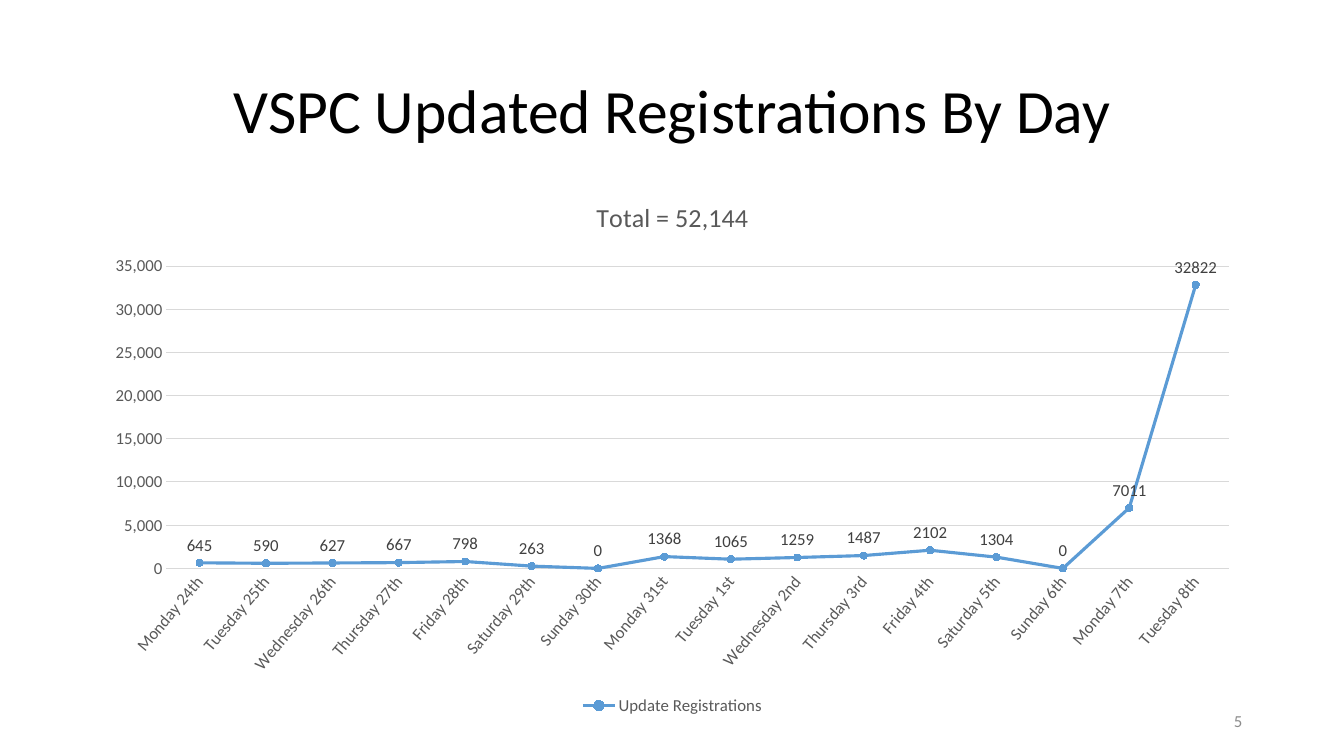
from dataclasses import dataclass
from typing import Any

from lxml.etree import SubElement
from pptx import Presentation
from pptx.chart.data import CategoryChartData
from pptx.dml.color import RGBColor
from pptx.enum.chart import (
    XL_CHART_TYPE as ChartType,
    XL_LABEL_POSITION as LabelPos,
    XL_LEGEND_POSITION as LegendPos,
    XL_MARKER_STYLE as Marker,
    XL_TICK_MARK as Tick,
)
from pptx.enum.text import MSO_ANCHOR as Anchor, PP_ALIGN as Align
from pptx.oxml.ns import qn
from pptx.util import Inches, Pt

BLACK = RGBColor(0x00, 0x00, 0x00)
DARK = RGBColor(0x40, 0x40, 0x40)
GREY = RGBColor(0x59, 0x59, 0x59)
MUTED = RGBColor(0x8C, 0x8C, 0x8C)
RULE = RGBColor(0xD9, 0xD9, 0xD9)
BLUE = RGBColor(0x5B, 0x9B, 0xD5)

WIDTH, HEIGHT = Inches(40 / 3), Inches(7.5)
FONT = "Calibri"
DAY_ANGLE = -50

REGISTRATIONS = {
    "Monday 24th": 645,
    "Tuesday 25th": 590,
    "Wednesday 26th": 627,
    "Thursday 27th": 667,
    "Friday 28th": 798,
    "Saturday 29th": 263,
    "Sunday 30th": 0,
    "Monday 31st": 1368,
    "Tuesday 1st": 1065,
    "Wednesday 2nd": 1259,
    "Thursday 3rd": 1487,
    "Friday 4th": 2102,
    "Saturday 5th": 1304,
    "Sunday 6th": 0,
    "Monday 7th": 7011,
    "Tuesday 8th": 32822,
}


@dataclass(frozen=True)
class Area:
    left: float
    top: float
    width: float
    height: float

    def box(self) -> dict[str, int]:
        return {
            "left": round(self.left * WIDTH),
            "top": round(self.top * HEIGHT),
            "width": round(self.width * WIDTH),
            "height": round(self.height * HEIGHT),
        }


@dataclass(frozen=True)
class TextStyle:
    size: float
    color: RGBColor
    align: Align = Align.CENTER
    spacing: float = 1.0


TITLE_AREA = Area(0.92 / 13.33, 0.4 / 7.5, 11.5 / 13.33, 1.45 / 7.5)
CHART_AREA = Area(0.92 / 13.33, 1.85 / 7.5, 11.5 / 13.33, 5.29 / 7.5)
NUMBER_AREA = Area(9.42 / 13.33, 6.95 / 7.5, 3 / 13.33, 0.4 / 7.5)

TOTAL_LAYOUT = {"x": 4.95 / 11.5, "y": 0.08 / 5.29}
PLOT_LAYOUT = {"x": 0.73 / 11.5, "y": 0.79 / 5.29, "w": 10.54 / 11.5, "h": 3 / 5.29}

TITLE_STYLE = TextStyle(44, BLACK, spacing=0.9)
NUMBER_STYLE = TextStyle(12, MUTED, Align.RIGHT)
TOTAL_STYLE = TextStyle(18.6, GREY)
AXIS_STYLE = TextStyle(12, GREY)
LABEL_STYLE = TextStyle(12, DARK)


def set_all(target: Any, values: dict[str, Any]) -> None:
    for name, value in values.items():
        setattr(target, name, value)


def set_font(font: Any, style: TextStyle) -> None:
    set_all(font, {"name": FONT, "size": Pt(style.size), "bold": False})
    font.color.rgb = style.color


def set_line(line: Any, color: RGBColor, width: float) -> None:
    line.color.rgb = color
    line.width = Pt(width)


def write(tf: Any, text: str, style: TextStyle) -> None:
    set_all(tf, {"word_wrap": True, "vertical_anchor": Anchor.MIDDLE})
    p = tf.paragraphs[0]
    set_all(p, {"alignment": style.align, "line_spacing": style.spacing})
    r = p.add_run()
    r.text = text
    set_font(r.font, style)


def place(parent: Any, index: int, shares: dict[str, float], inner: bool) -> None:
    for old in parent.findall(qn("c:layout")):
        parent.remove(old)
    layout = SubElement(parent, qn("c:layout"))
    parent.insert(index, layout)
    manual = SubElement(layout, qn("c:manualLayout"))
    values = {"layoutTarget": "inner"} if inner else {}
    values |= {"xMode": "edge", "yMode": "edge"}
    values |= {name: f"{share:.4f}" for name, share in shares.items()}
    for name, value in values.items():
        SubElement(manual, qn(f"c:{name}")).set("val", value)


def format_axes(chart: Any) -> None:
    for axis in (chart.category_axis, chart.value_axis):
        set_all(axis, {"major_tick_mark": Tick.NONE, "minor_tick_mark": Tick.NONE})
        set_font(axis.tick_labels.font, AXIS_STYLE)
    set_line(chart.category_axis.format.line, RULE, 0.75)
    axis = chart.value_axis
    axis.format.line.fill.background()
    set_line(axis.major_gridlines.format.line, RULE, 0.75)
    set_all(axis, {"minimum_scale": 0, "maximum_scale": 35000, "major_unit": 5000})
    set_all(axis.tick_labels, {"number_format": "#,##0", "number_format_is_linked": False})
    for body in chart.element.xpath(".//c:catAx/c:txPr/a:bodyPr"):
        body.set("rot", str(DAY_ANGLE * 60000))
        body.set("vert", "horz")


def format_series(series: Any) -> None:
    series.smooth = False
    set_line(series.format.line, BLUE, 2.25)
    marker = series.marker
    set_all(marker, {"style": Marker.CIRCLE, "size": 5})
    marker.format.fill.solid()
    marker.format.fill.fore_color.rgb = BLUE
    set_line(marker.format.line, BLUE, 0.75)
    labels = series.data_labels
    set_all(labels, {"show_value": True, "position": LabelPos.ABOVE})
    set_font(labels.font, LABEL_STYLE)


def add_registrations_chart(s: Any) -> None:
    data = CategoryChartData()
    data.categories = list(REGISTRATIONS)
    data.add_series("Update Registrations", list(REGISTRATIONS.values()))
    chart = s.shapes.add_chart(
        ChartType.LINE_MARKERS, *CHART_AREA.box().values(), data
    ).chart
    set_font(chart.font, TextStyle(10, BLACK))
    set_all(chart, {"has_title": True, "has_legend": True})
    r = chart.chart_title.text_frame.paragraphs[0].add_run()
    r.text = "Total = 52,144"
    set_font(r.font, TOTAL_STYLE)
    set_all(chart.legend, {"position": LegendPos.BOTTOM, "include_in_layout": False})
    set_font(chart.legend.font, AXIS_STYLE)
    format_axes(chart)
    plot = chart.plots[0]
    plot.vary_by_categories = False
    format_series(plot.series[0])
    place(chart.element.find(".//" + qn("c:title")), 1, TOTAL_LAYOUT, False)
    place(chart.element.find(".//" + qn("c:plotArea")), 0, PLOT_LAYOUT, True)


def main() -> None:
    prs = Presentation()
    set_all(prs, {"slide_width": WIDTH, "slide_height": HEIGHT})
    s = prs.slides.add_slide(prs.slide_layouts[5])
    title = s.shapes.title
    set_all(title, TITLE_AREA.box())
    write(title.text_frame, "VSPC Updated Registrations By Day", TITLE_STYLE)
    add_registrations_chart(s)
    number = s.shapes.add_textbox(**NUMBER_AREA.box())
    write(number.text_frame, "5", NUMBER_STYLE)
    prs.save("out.pptx")


if __name__ == "__main__":
    main()
